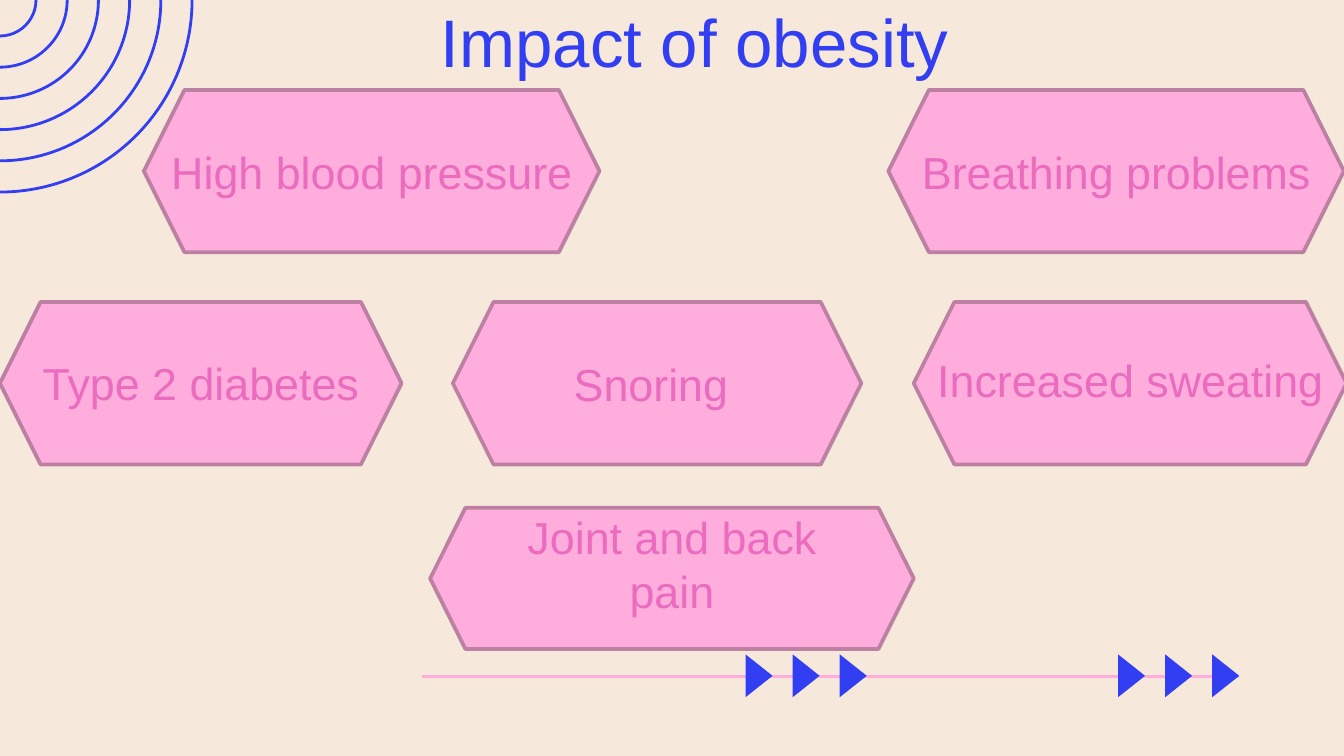
from lxml.etree import SubElement
from pptx import Presentation
from pptx.dml.color import RGBColor
from pptx.enum.shapes import MSO_CONNECTOR, MSO_SHAPE
from pptx.enum.text import MSO_ANCHOR, MSO_AUTO_SIZE, PP_ALIGN
from pptx.oxml.ns import qn
from pptx.util import Cm, Pt

CREAM = RGBColor(0xF7, 0xE8, 0xDC)
BLUE = RGBColor(0x31, 0x3E, 0xF2)
PINK = RGBColor(0xFE, 0xAD, 0xDD)
MAUVE = RGBColor(0xBC, 0x80, 0xA3)
ROSE = RGBColor(0xEB, 0x6B, 0xBE)

HIGH_ROW, MIDDLE_ROW = 1.7, 5.71
HEXAGON_HEIGHT = 3.07
LABEL_HEIGHT = 0.84


class SlideBuilder:
    font_name = "Arial"

    def __init__(self, slide):
        self.slide = slide
        slide.background.fill.solid()
        slide.background.fill.fore_color.rgb = CREAM

    def preset(self, kind, left, top, width, height, fill=None, line=None, line_width=1.5):
        shape = self.slide.shapes.add_shape(kind, Cm(left), Cm(top), Cm(width), Cm(height))
        shape.shadow.inherit = False
        if fill is None:
            shape.fill.background()
        else:
            shape.fill.solid()
            shape.fill.fore_color.rgb = fill
        if line is None:
            shape.line.fill.background()
        else:
            shape.line.color.rgb = line
            shape.line.width = Pt(line_width)
        return shape

    def ring(self, radius):
        self.preset(MSO_SHAPE.OVAL, -radius, -radius, 2 * radius, 2 * radius, line=BLUE)

    def arrow(self, left, top):
        shape = self.preset(MSO_SHAPE.ISOSCELES_TRIANGLE, left, top, 0.81, 0.51, fill=BLUE)
        shape.adjustments[0] = 0.5
        shape.rotation = 90

    def rule(self, left, right, y):
        connector = self.slide.shapes.add_connector(
            MSO_CONNECTOR.STRAIGHT, Cm(left), Cm(y), Cm(right), Cm(y))
        connector.line.color.rgb = PINK
        connector.line.width = Pt(1.5)
        SubElement(connector.element.spPr, qn("a:effectLst"))

    def hexagon(self, left, top, width, height=HEXAGON_HEIGHT, text=None):
        shape = self.preset(MSO_SHAPE.HEXAGON, left, top, width, height, PINK, MAUVE, 2)
        if text:
            self.add_text(shape.text_frame, text, 24, ROSE)
        return shape

    def placeholder(self, index, text, left, top, width, height=LABEL_HEIGHT, size=24, color=ROSE):
        shape = self.slide.placeholders[index]
        shape.left, shape.top = Cm(left), Cm(top)
        shape.width, shape.height = Cm(width), Cm(height)
        shape.element.getparent().append(shape.element)
        frame = shape.text_frame
        frame.margin_left = frame.margin_right = Cm(0.25)
        frame.margin_top = frame.margin_bottom = Cm(0.25)
        self.add_text(frame, text, size, color)

    def add_text(self, frame, text, size, color):
        frame.word_wrap = True
        frame.auto_size = MSO_AUTO_SIZE.NONE
        frame.vertical_anchor = MSO_ANCHOR.MIDDLE
        paragraph = frame.paragraphs[0]
        properties = paragraph._p.get_or_add_pPr()
        properties.set("marL", "0")
        properties.set("indent", "0")
        SubElement(properties, qn("a:buNone"))
        paragraph.alignment = PP_ALIGN.CENTER
        paragraph.space_before = Pt(0)
        run = paragraph.add_run()
        run.text = text
        run.font.name = self.font_name
        run.font.size = Pt(size)
        run.font.bold = False
        run.font.color.rgb = color


def main():
    presentation = Presentation()
    presentation.slide_width, presentation.slide_height = Cm(25.4), Cm(14.29)
    comparison_layout = presentation.slide_layouts[4]
    builder = SlideBuilder(presentation.slides.add_slide(comparison_layout))

    for step in range(6):
        builder.ring(0.68 + 0.59 * step)

    builder.rule(7.98, 23.42, 12.78)
    for group_left in (13.94, 20.98):
        for step in range(3):
            builder.arrow(group_left + 0.89 * step, 12.52)

    builder.hexagon(17.27, MIDDLE_ROW, 8.18)
    builder.hexagon(0, MIDDLE_ROW, 7.59)
    builder.hexagon(16.79, HIGH_ROW, 8.61)
    builder.hexagon(2.72, HIGH_ROW, 8.61)

    builder.placeholder(0, "Impact of obesity", 2.41, 0.1, 21.44, 1.32, 36, BLUE)
    builder.placeholder(1, "High blood pressure", 2.72, 2.82, 8.61)
    builder.placeholder(2, "Breathing problems", 16.79, 2.82, 8.61)
    builder.placeholder(3, "Increased sweating", 16.79, 6.76, 9.14)
    builder.hexagon(8.56, MIDDLE_ROW, 7.72, text="Snoring ")
    builder.placeholder(4, "Type 2 diabetes", 0.15, 6.81, 7.29)
    joint_pain = builder.hexagon(8.13, 9.6, 9.14, 2.67, "Joint and back pain")
    joint_pain.text_frame.margin_bottom = Cm(0.69)

    presentation.save("out.pptx")


if __name__ == "__main__":
    main()
